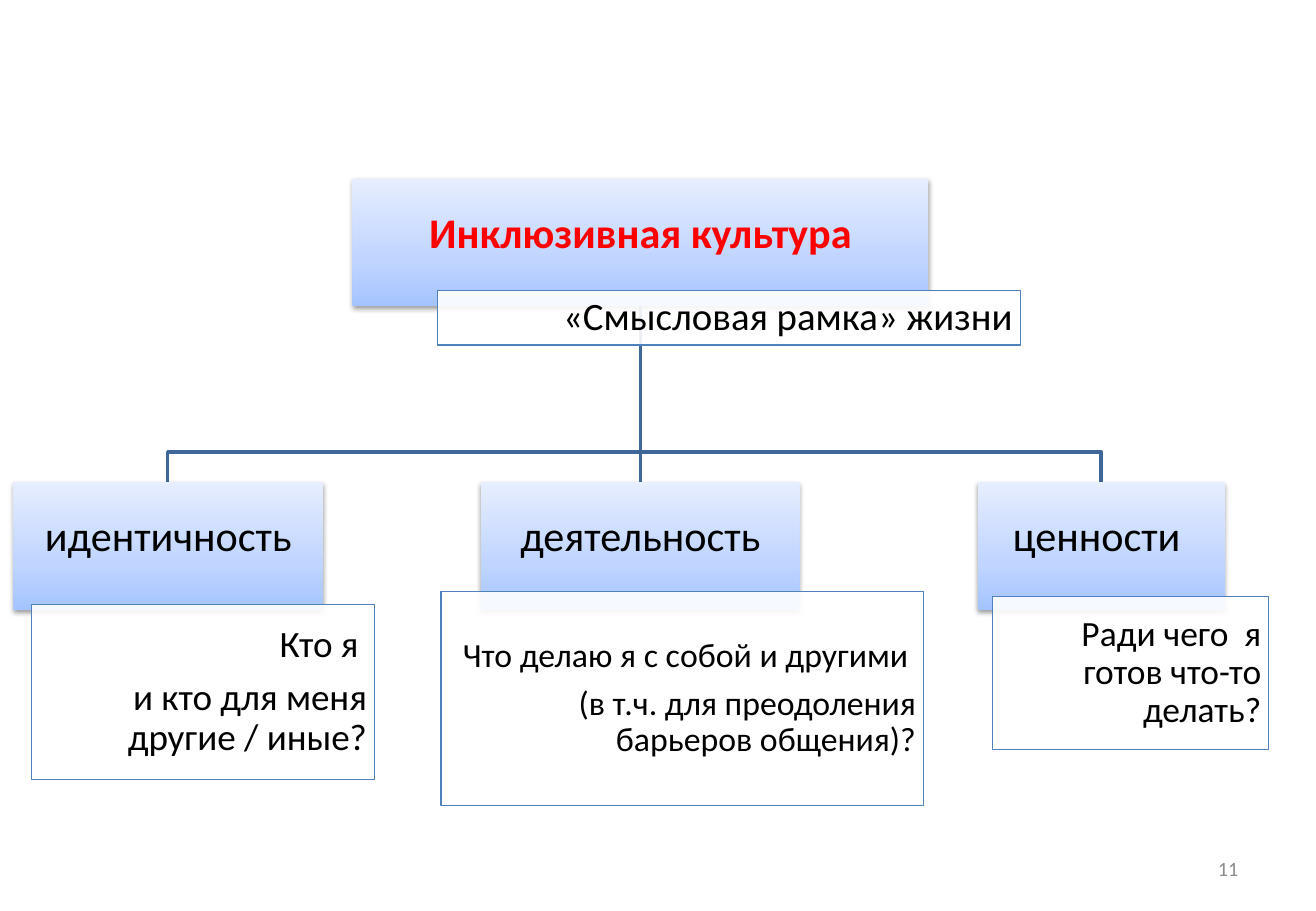
from copy import deepcopy
from dataclasses import dataclass

from lxml.etree import SubElement
from pptx import Presentation
from pptx.dml.color import RGBColor
from pptx.enum.shapes import MSO_CONNECTOR, MSO_SHAPE
from pptx.enum.text import MSO_ANCHOR, PP_ALIGN
from pptx.oxml.ns import qn
from pptx.util import Emu, Pt

PX = 9144  # EMU in one px: 100 px to the inch
FONT = "Calibri"
BLACK = RGBColor(0x00, 0x00, 0x00)
WHITE = RGBColor(0xFF, 0xFF, 0xFF)
RED = RGBColor(0xFF, 0x00, 0x00)
GREY = RGBColor(0x8C, 0x8C, 0x8C)
BRANCH_BLUE = RGBColor(0x3F, 0x67, 0x97)
BORDER_BLUE = RGBColor(0x4F, 0x81, 0xBD)
GRADIENT = (
    (0, RGBColor(0xA4, 0xC4, 0xFF)),
    (0.35, RGBColor(0xBF, 0xD4, 0xFF)),
    (1, RGBColor(0xE6, 0xEE, 0xFF)),
)
NODE_HEIGHT = 105
ROOT_TOP, BRANCH_Y, CHILD_TOP = 147, 372, 397


@dataclass
class Caption:
    left: int
    top: int
    width: int
    height: int
    size: int
    lines: tuple[str, ...]
    inset: int = 2


@dataclass
class Node:
    text: str
    left: int
    top: int
    width: int
    caption: Caption
    color: RGBColor = BLACK
    bold: bool = False

    @property
    def center(self) -> int:
        return self.left + self.width // 2


ROOT = Node("Инклюзивная культура", 290, ROOT_TOP, 474,
            Caption(360, 239, 480, 45, 23, ("«Смысловая рамка» жизни",)), RED, True)
IDENTITY = Node("идентичность", 11, CHILD_TOP, 255,
                Caption(26, 498, 282, 144, 22,
                        ("Кто я ", "и кто для меня другие / иные?")))
ACTIVITY = Node("деятельность", 396, CHILD_TOP, 262,
                Caption(363, 487, 397, 176, 20,
                        ("Что делаю я с собой и другими ",
                         "(в т.ч. для преодоления барьеров общения)?"), 1))
VALUES = Node("ценности ", 805, CHILD_TOP, 203,
              Caption(817, 491, 227, 126, 21, ("Ради чего  я готов что-то делать?",), 1))
NODES = (ROOT, IDENTITY, ACTIVITY, VALUES)


def px(*lengths: int) -> list[Emu]:
    return [Emu(length * PX) for length in lengths]


def write_text(shape, *lines: str, size: int, color: RGBColor = BLACK, bold: bool = False,
               align=PP_ALIGN.RIGHT, insets: tuple[int, int, int, int] = (10, 5, 10, 5),
               line_spacing: float = 0.9) -> None:
    frame = shape.text_frame
    frame.word_wrap = True
    frame.vertical_anchor = MSO_ANCHOR.MIDDLE
    (frame.margin_left, frame.margin_top,
     frame.margin_right, frame.margin_bottom) = px(*insets)
    for index, line in enumerate(lines):
        paragraph = frame.add_paragraph() if index else frame.paragraphs[0]
        paragraph.alignment = align
        paragraph.line_spacing = line_spacing
        paragraph.space_after = Pt(round(size * 0.35, 1))
        run = paragraph.add_run()
        run.text = line
        run.font.name = FONT
        run.font.size = Pt(size)
        run.font.bold = bold
        run.font.color.rgb = color


def fill_gradient(shape) -> None:
    shape.fill.gradient()
    shape.fill.gradient_angle = 90
    stop_list = shape.element.spPr.find(".//" + qn("a:gsLst"))
    stop_list.append(deepcopy(stop_list[0]))
    for stop, (position, color) in zip(shape.fill.gradient_stops, GRADIENT):
        stop.position = position
        stop.color.rgb = color


def add_soft_shadow(shape) -> None:
    effects = shape.element.spPr.find(qn("a:effectLst"))
    shadow = SubElement(effects, qn("a:outerShdw"), blurRad=str(Pt(3.1)),
                        dist=str(Pt(1.6)), dir="5400000", rotWithShape="0")
    color = SubElement(shadow, qn("a:srgbClr"), val=str(BLACK))
    SubElement(color, qn("a:alpha"), val="38000")


def add_node(slide, node: Node):
    shape = slide.shapes.add_shape(
        MSO_SHAPE.RECTANGLE, *px(node.left, node.top, node.width, NODE_HEIGHT))
    shape.shadow.inherit = False
    add_soft_shadow(shape)
    fill_gradient(shape)
    shape.line.fill.background()
    write_text(shape, node.text, size=25, color=node.color, bold=node.bold,
               align=PP_ALIGN.CENTER, insets=(2, 2, 2, 15))
    return shape


def add_caption(slide, caption: Caption) -> None:
    shape = slide.shapes.add_shape(
        MSO_SHAPE.RECTANGLE, *px(caption.left, caption.top, caption.width, caption.height))
    shape.shadow.inherit = False
    shape.fill.solid()
    shape.fill.fore_color.rgb = WHITE
    fill_color = shape.element.spPr.find(qn("a:solidFill"))[0]
    SubElement(fill_color, qn("a:alpha"), val="90000")
    shape.line.color.rgb = BORDER_BLUE
    shape.line.width = Pt(0.75)
    write_text(shape, *caption.lines, size=caption.size,
               insets=(6, caption.inset, 6, caption.inset))


def style_branch(line) -> None:
    line.color.rgb = BRANCH_BLUE
    line.width = Pt(2)


def add_trunk(slide, parent, child) -> None:
    connector = slide.shapes.add_connector(MSO_CONNECTOR.STRAIGHT, 0, 0, 0, 0)
    connector.begin_connect(parent, 2)
    connector.end_connect(child, 0)
    style_branch(connector.line)
    SubElement(connector.element.spPr, qn("a:effectLst"))


def add_side_branch(slide, parent: Node, child: Node) -> None:
    builder = slide.shapes.build_freeform(
        parent.center, parent.top + NODE_HEIGHT, scale=PX)
    builder.add_line_segments(
        [(parent.center, BRANCH_Y), (child.center, BRANCH_Y), (child.center, child.top)],
        close=False)
    shape = builder.convert_to_shape()
    shape.shadow.inherit = False
    shape.fill.background()
    style_branch(shape.line)


def main() -> None:
    presentation = Presentation()
    presentation.slide_width, presentation.slide_height = px(1083, 750)
    slide = presentation.slides.add_slide(presentation.slide_layouts[6])

    # Branches behind the boxes
    for child in (VALUES, IDENTITY):
        add_side_branch(slide, ROOT, child)

    # Boxes and the trunk that joins two of them
    root, _, activity, _ = [add_node(slide, node) for node in NODES]
    add_trunk(slide, root, activity)

    # Captions over the boxes
    for node in NODES:
        add_caption(slide, node.caption)

    # Slide number
    number = slide.shapes.add_textbox(*px(776, 695, 253, 40))
    write_text(number, "11", size=12, color=GREY, line_spacing=1.0)

    presentation.save("out.pptx")


if __name__ == "__main__":
    main()
